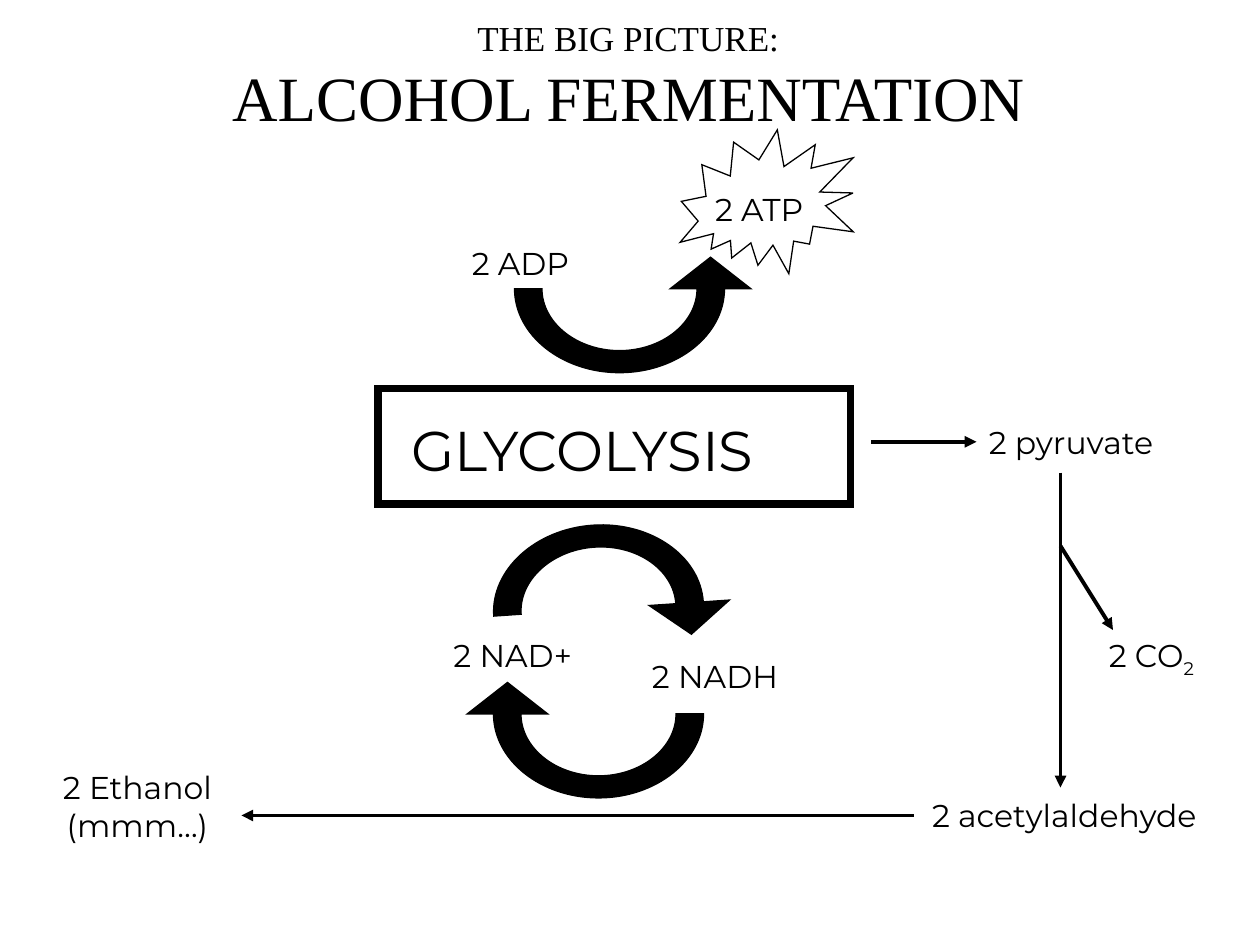
from math import cos, radians, sin

from lxml import etree
from pptx import Presentation
from pptx.dml.color import RGBColor
from pptx.enum.shapes import MSO_CONNECTOR as CONN, MSO_SHAPE as SHAPE
from pptx.enum.text import MSO_AUTO_SIZE as AUTO, PP_ALIGN as ALIGN
from pptx.oxml.ns import qn
from pptx.util import Pt

COLORS = {"ink": "000000"}
INK = RGBColor.from_string(COLORS["ink"])
BODY, SERIF = "Montserrat", "Times New Roman"


def add_run(p, text, size, font):
    r = p.add_run()
    r.text = text
    r.font.size = Pt(size)
    r.font.name = font
    r.font.color.rgb = INK
    return r


def add_text(shapes, x, y, w, h, lines, font=BODY, align=ALIGN.LEFT, wrap=False):
    sp = shapes.add_textbox(Pt(x), Pt(y), Pt(w), Pt(h))
    tf = sp.text_frame
    tf.word_wrap = wrap
    tf.auto_size = AUTO.SHAPE_TO_FIT_TEXT
    for i, (text, size) in enumerate(lines):
        p = tf.add_paragraph() if i else tf.paragraphs[0]
        p.alignment = align
        add_run(p, text, size, font)
    return sp


def add_label(s, x, y, w, text):
    return add_text(s.shapes, x, y, w, 29, [(text, 18)])


def add_arrow(s, x1, y1, x2, y2):
    c = s.shapes.add_connector(CONN.STRAIGHT, Pt(x1), Pt(y1), Pt(x2), Pt(y2))
    c.line.color.rgb = INK
    c.line.width = Pt(2.25)
    etree.SubElement(c.line._get_or_add_ln(), qn("a:tailEnd"), type="triangle")
    etree.SubElement(c._element.spPr, qn("a:effectLst"))
    return c


def add_outline(sp, width):
    sp.shadow.inherit = False
    sp.fill.background()
    sp.line.color.rgb = INK
    sp.line.width = Pt(width)
    etree.SubElement(sp.line._get_or_add_ln(), qn("a:miter"), lim="800000")


def bend_segments(sp, starts):
    segments = list(sp._element.iter(qn("a:lnTo")))
    for i in starts:
        curve = etree.Element(qn("a:cubicBezTo"))
        segments[i].addprevious(curve)
        for segment in segments[i:i + 3]:
            curve.append(segment[0])
            segment.getparent().remove(segment)


def add_curved_arrow(s, cx, cy, flip_x=1, flip_y=1, tilt=0):
    def half_ellipse(rx, ry):
        k = 0.55
        return [(rx, 0), (rx, k * ry), (k * rx, ry), (0, ry),
                (-k * rx, ry), (-rx, k * ry), (-rx, 0)]

    outline = half_ellipse(44.3, 35.4) + half_ellipse(60, 48)[::-1]
    outline += [(75, 0), (52, -18), (29, 0)]
    a = radians(tilt)
    points = []
    for x, y in outline:
        x, y = x * flip_x, y * flip_y
        points.append((Pt(cx + x * cos(a) - y * sin(a)),
                       Pt(cy + x * sin(a) + y * cos(a))))
    fb = s.shapes.build_freeform(*points[0], scale=1.0)
    fb.add_line_segments(points[1:], close=True)
    sp = fb.convert_to_shape()
    bend_segments(sp, (0, 3, 7, 10))
    add_outline(sp, 0.75)
    sp.fill.solid()
    sp.fill.fore_color.rgb = INK


def add_heading(s, x, y, w, h):
    lines = [("THE BIG PICTURE:", 20), ("ALCOHOL FERMENTATION", 36)]
    add_text(s.shapes, x, y, w, h, lines, SERIF, ALIGN.CENTER, True)


def add_glycolysis(s, x, y, w, h):
    group = s.shapes.add_group_shape()
    add_text(group.shapes, x + 12, y + 12, w - 26, 45, [("GLYCOLYSIS", 32)])
    frame = group.shapes.add_shape(SHAPE.RECTANGLE, Pt(x), Pt(y), Pt(w), Pt(h))
    add_outline(frame, 4.5)


def add_energy_turn(s, x, y, w, h):
    add_label(s, x - 0.5, y + 70, 73, "2 ADP")
    add_label(s, x + 138.5, y + 39, 73, "2 ATP")
    add_curved_arrow(s, x + 91, y + h - 48)
    burst = s.shapes.add_shape(SHAPE.EXPLOSION2, Pt(x + w - 90), Pt(y), Pt(90), Pt(102))
    burst.rotation = 42
    add_outline(burst, 0.75)


def add_carrier_cycle(s, x, y, w, h):
    cx = x + 90
    add_label(s, x, y + 60, 87, "2 NAD+")
    add_label(s, x + w - 91.5, y + 72, 91, "2 NADH")
    add_curved_arrow(s, cx, y + h - 48, flip_x=-1)
    add_curved_arrow(s, cx, y + 48, flip_y=-1, tilt=-3.9)


def add_product_path(s, x, y, w, h):
    stem, base = x + 581, y + h - 20
    pyruvate = add_label(s, x + 533, y, 119, "2 pyruvate")
    arrow = add_arrow(s, x + 473, y + 14.5, x + 533, y + 14.5)
    arrow.end_connect(pyruvate, 1)
    add_arrow(s, stem, y + 32, stem, y + 212)
    add_arrow(s, stem, y + 74, stem + 30, y + 122)
    co2 = add_label(s, x + 601.5, y + 122, 70, "2 CO")
    sub = add_run(co2.text_frame.paragraphs[0], "2", 18, BODY)
    sub.font._element.set("baseline", "-25000")
    add_label(s, x + w - 182.5, base - 14.5, 182, "2 acetylaldehyde")
    add_arrow(s, x + 497, base, x + 113, base)
    add_text(s.shapes, x, y + h - 50.5, 107, 50,
             [("2 Ethanol", 18), ("(mmm…)", 18)], align=ALIGN.CENTER)


def main():
    prs = Presentation()
    prs.slide_width, prs.slide_height = Pt(720), Pt(540)
    s = prs.slides.add_slide(prs.slide_layouts[6])
    add_heading(s, 29, 6, 660, 74)
    add_glycolysis(s, 216, 222, 270, 66)
    add_energy_turn(s, 263, 66, 223, 147)
    add_carrier_cycle(s, 252, 300, 205, 156)
    add_product_path(s, 25, 238, 683, 248)
    prs.save("out.pptx")


if __name__ == "__main__":
    main()
